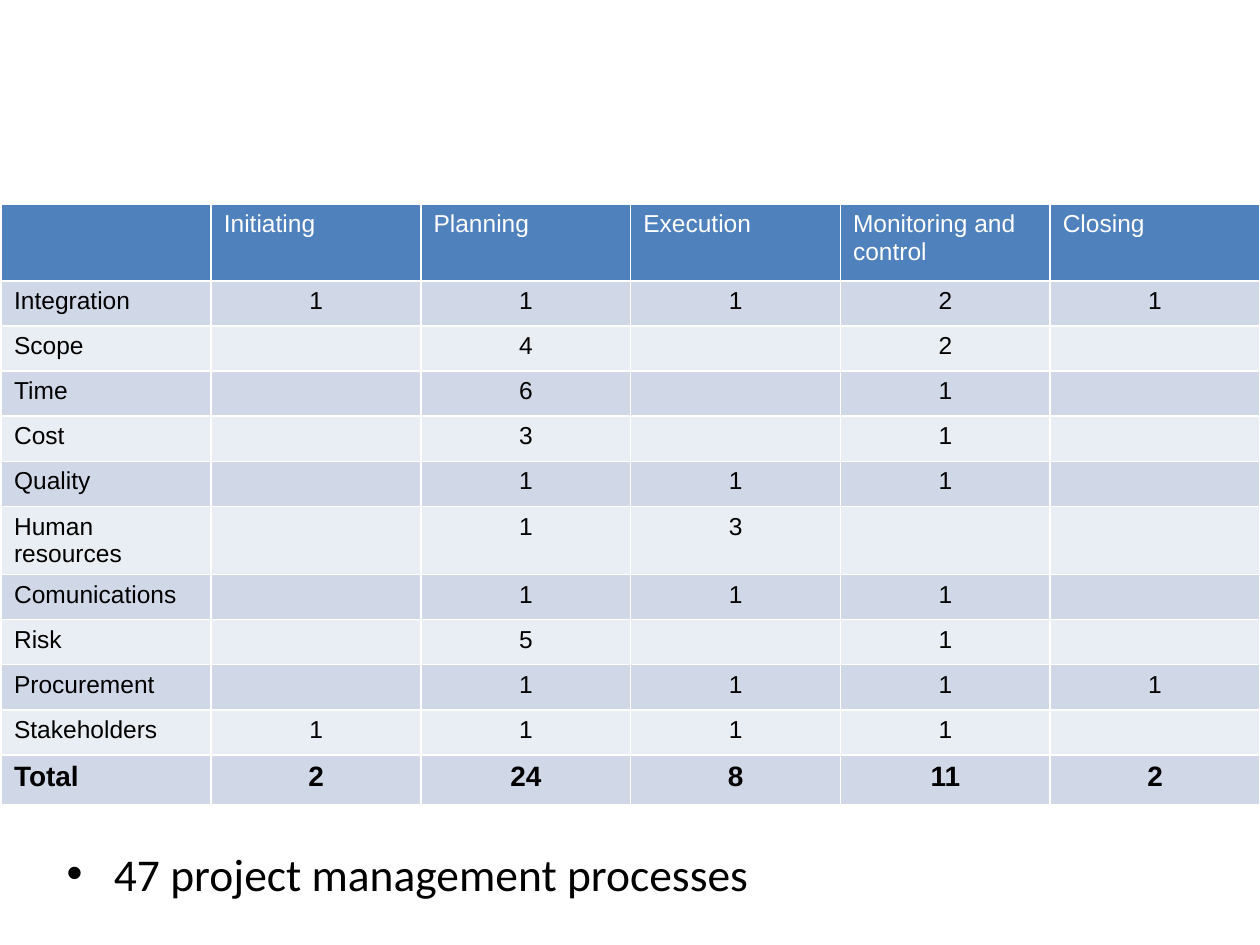
from pptx import Presentation
from pptx import util as u
from pptx.dml.color import RGBColor
from pptx.enum import text
from pptx.oxml.xmlchemy import OxmlElement

HEADS = ["", "Initiating", "Planning", "Execution", "Monitoring and control", "Closing"]
AREAS = [
    ["Integration", "1", "1", "1", "2", "1"],
    ["Scope", "", "4", "", "2", ""],
    ["Time", "", "6", "", "1", ""],
    ["Cost", "", "3", "", "1", ""],
    ["Quality", "", "1", "1", "1", ""],
    ["Human resources", "", "1", "3", "", ""],
    ["Comunications", "", "1", "1", "1", ""],
    ["Risk", "", "5", "", "1", ""],
    ["Procurement", "", "1", "1", "1", "1"],
    ["Stakeholders", "1", "1", "1", "1", ""],
]
TOTAL = ["Total", "2", "24", "8", "11", "2"]


def rgb(value):
    return RGBColor.from_string(value)


def set_font(p, name, size, color, bold=False):
    p.font.name = name
    p.font.size = u.Pt(size)
    p.font.bold = bold
    p.font.color.rgb = rgb(color)


def fill_cell(cell, value, fill, color, size, bold, centred):
    cell.fill.solid()
    cell.fill.fore_color.rgb = rgb(fill)
    cell.text = value
    p = cell.text_frame.paragraphs[0]
    if centred:
        p.alignment = text.PP_ALIGN.CENTER
    set_font(p, "Arial", size, color, bold)
    if not value:
        end = OxmlElement("a:endParaRPr")
        end.set("sz", str(size * 100))
        p._p.append(end)


def process_table(s, x, y, w):
    rows = [HEADS] + AREAS + [TOTAL]
    heights = {0: 1.54, 6: 1.37, len(rows) - 1: 1.0}
    tbl = s.shapes.add_table(len(rows), len(HEADS), u.Cm(x), u.Cm(y), u.Cm(w), u.Cm(12)).table
    for col in tbl.columns:
        col.width = u.Cm(w / len(HEADS))
    for i, row in enumerate(rows):
        tbl.rows[i].height = u.Cm(heights.get(i, 0.91))
        head, total = row is HEADS, row is TOTAL
        fill = "4F81BD" if head else "D0D8E8" if i % 2 else "E9EDF4"
        color = "FFFFFF" if head else "000000"
        for j, value in enumerate(row):
            fill_cell(tbl.cell(i, j), value, fill, color, 16 if total else 14, total,
                      centred=j > 0 and not head)


def summary(s, x, y, w, h):
    sp = s.placeholders[1]
    sp.left, sp.top, sp.width, sp.height = map(u.Cm, (x, y, w, h))
    tf = sp.text_frame
    tf.text = "47 project management processes"
    tf.auto_size = text.MSO_AUTO_SIZE.NONE
    p = tf.paragraphs[0]
    p.space_before = u.Pt(0)
    set_font(p, "Calibri", 26, "000000")


def main():
    prs = Presentation()
    prs.slide_width, prs.slide_height = u.Cm(25.4), u.Cm(19.05)
    s = prs.slides.add_slide(prs.slide_layouts[1])
    title = s.shapes.title.element
    title.getparent().remove(title)
    process_table(s, 0.03, 4.12, 25.37)
    summary(s, 1.09, 16.92, 22.86, 1.24)
    prs.save("out.pptx")


if __name__ == "__main__":
    main()
